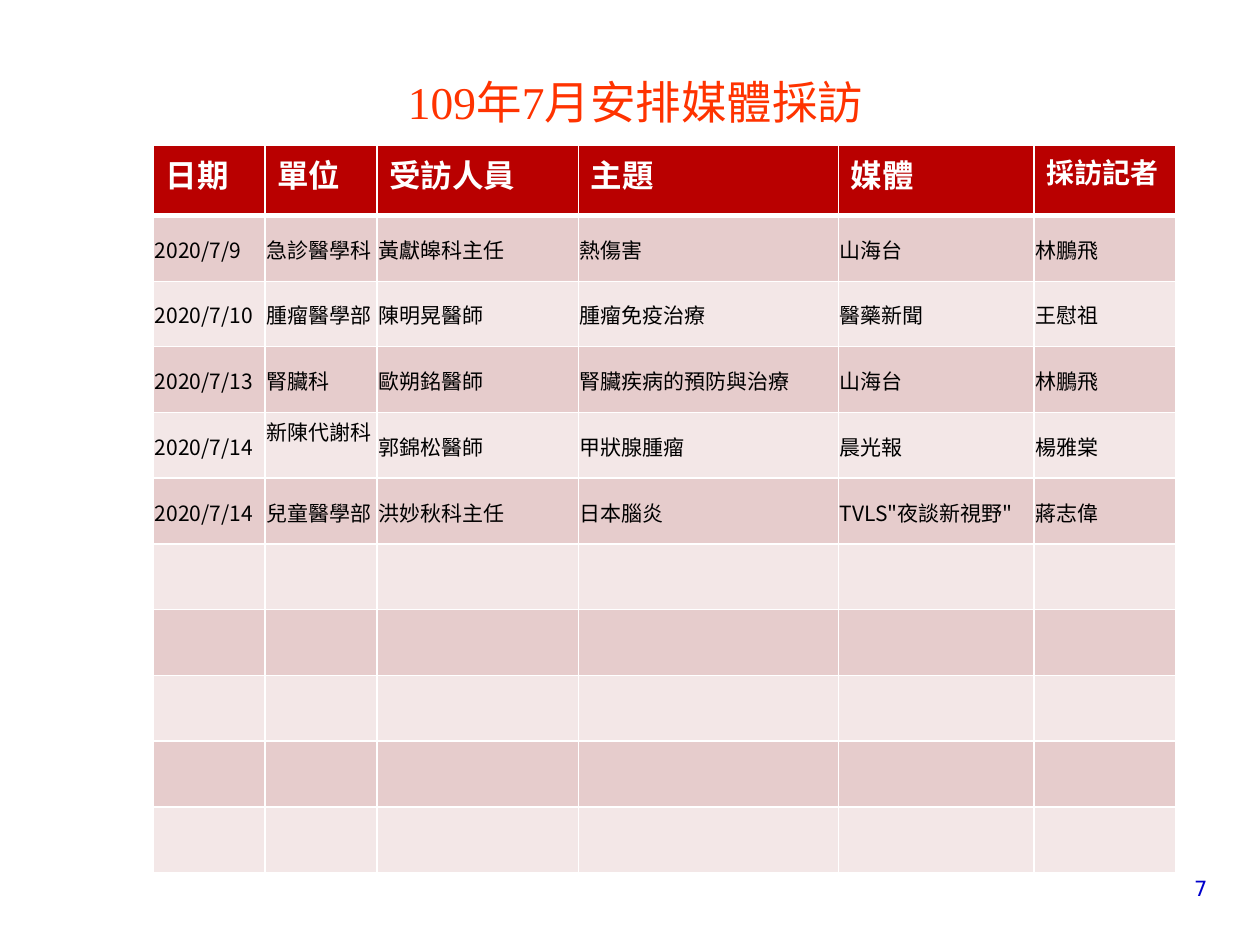
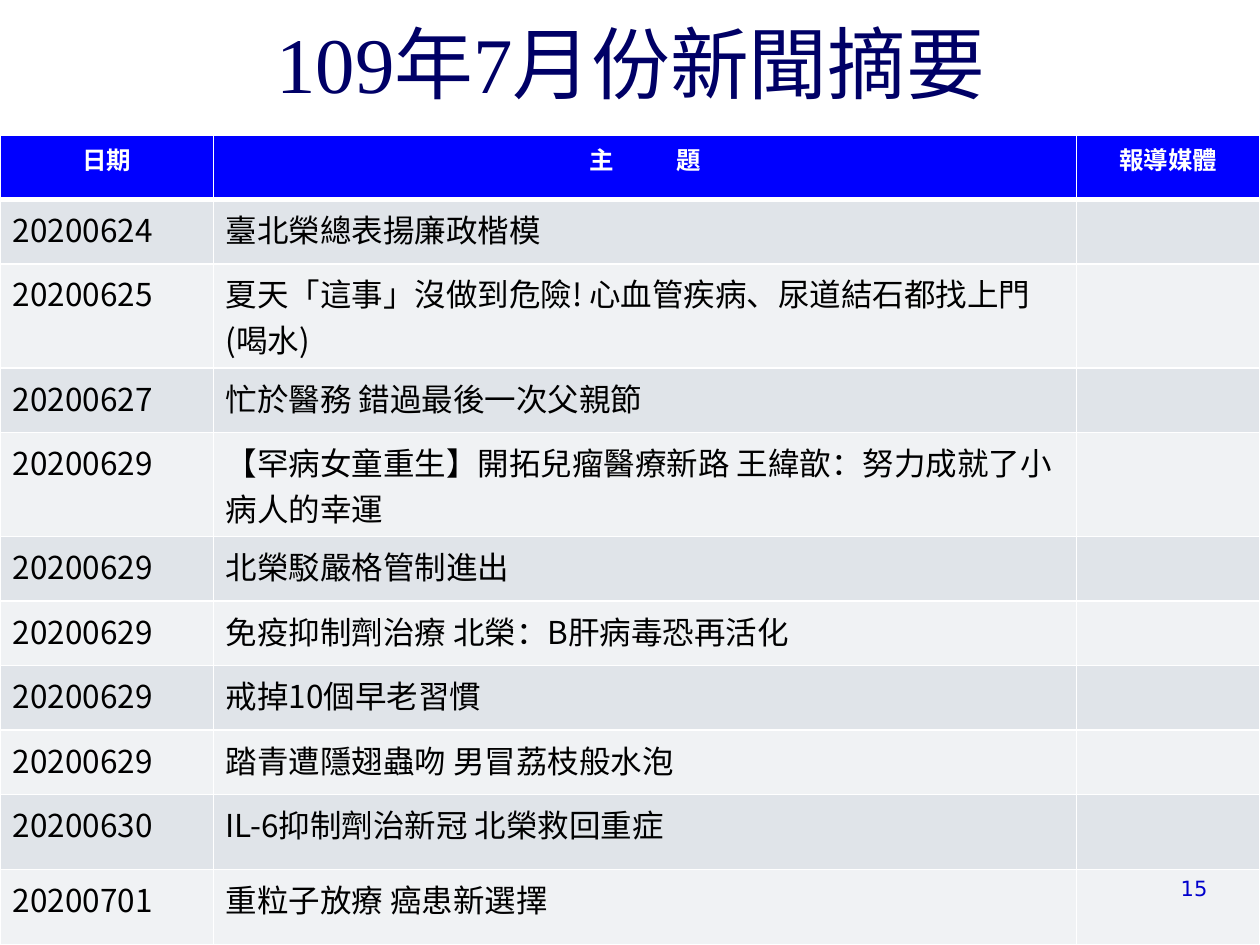
from lxml import etree
from pptx import Presentation
from pptx.dml.color import RGBColor
from pptx.enum import text
from pptx.oxml import ns
from pptx.util import Cm, Pt

WHITE = RGBColor(0xFF, 0xFF, 0xFF)
BLACK = RGBColor(0, 0, 0)
ORANGE = RGBColor(0xFF, 0x33, 0x00)
NAVY = RGBColor(0x00, 0x00, 0x66)
INK = RGBColor(0x00, 0x00, 0xCC)
RED = RGBColor(0xB9, 0x00, 0x00)
PINKS = RGBColor(0xE6, 0xCC, 0xCC), RGBColor(0xF3, 0xE7, 0xE7)
BLUE = RGBColor(0x00, 0x00, 0xFF)
GRAYS = RGBColor(0xE0, 0xE4, 0xE9), RGBColor(0xF0, 0xF2, 0xF4)
SERIF, SANS = "Times New Roman", "DejaVu Sans"
HAN, HANT = "Noto Sans CJK SC", "Noto Sans CJK TC"
LEFT, MID, RIGHT, JUST = (text.PP_ALIGN.LEFT, text.PP_ALIGN.CENTER,
                          text.PP_ALIGN.RIGHT, text.PP_ALIGN.JUSTIFY)
TOP, CENTER, BOTTOM = (text.MSO_ANCHOR.TOP, text.MSO_ANCHOR.MIDDLE,
                       text.MSO_ANCHOR.BOTTOM)
WIDE = (0.25, 0.13, 0.25, 0.13)  # insets: left, top, right, bottom
THIN = (0.03, 0.03, 0.03, 0)

# Content
VISITS = [
    ("日期", "單位", "受訪人員", "主題", "媒體", "採訪記者"),
    ("2020/7/9", "急診醫學科", "黃獻皞科主任", "熱傷害", "山海台", "林鵬飛"),
    ("2020/7/10", "腫瘤醫學部", "陳明晃醫師", "腫瘤免疫治療", "醫藥新聞", "王慰祖"),
    ("2020/7/13", "腎臟科", "歐朔銘醫師", "腎臟疾病的預防與治療", "山海台", "林鵬飛"),
    ("2020/7/14", "新陳代謝科", "郭錦松醫師", "甲狀腺腫瘤", "晨光報", "楊雅棠"),
    ("2020/7/14", "兒童醫學部", "洪妙秋科主任", "日本腦炎", 'TVLS"夜談新視野"', "蔣志偉"),
] + [("",) * 6] * 5

NEWS = [
    ("日期", "主 題", "報導媒體"),
    ("20200624", "臺北榮總表揚廉政楷模", ""),
    ("20200625", "夏天「這事」沒做到危險! 心血管疾病、尿道結石都找上門(喝水)", ""),
    ("20200627", "忙於醫務 錯過最後一次父親節", ""),
    ("20200629", "【罕病女童重生】開拓兒瘤醫療新路 王緯歆：努力成就了小病人的幸運", ""),
    ("20200629", "北榮駁嚴格管制進出", ""),
    ("20200629", "免疫抑制劑治療 北榮：B肝病毒恐再活化", ""),
    ("20200629", "戒掉10個早老習慣", ""),
    ("20200629", "踏青遭隱翅蟲吻 男冒荔枝般水泡", ""),
    ("20200630", "IL-6抑制劑治新冠 北榮救回重症", ""),
    ("20200701", "重粒子放療 癌患新選擇", ""),
]
ONE, TWO, LAST = 1.3, 2.1, 1.51  # heights of news rows

PAGES = [
    dict(title="109年7月安排媒體採訪", spot=(1.7, 1.91, 22.23, 0.81),
         size=26, color=ORANGE, page="7", rows=VISITS, at=(3.09, 2.92),
         cols=(2.25, 2.26, 4.06, 5.24, 3.95, 2.85),
         tall=[1.42] + [1.33, 1.32] * 5,
         head=dict(fill=RED, size=18, align=JUST),
         body=dict(fills=PINKS, size=12, inset=THIN, anchor=CENTER)),
    dict(title="109年7月份新聞摘要", spot=(1.6, 0.86, 22.23, 1.47),
         size=45, color=NAVY, page="15", rows=NEWS, at=(0.01, 2.72),
         cols=(4.29, 17.4, 3.7),
         tall=[ONE, ONE, TWO, ONE, TWO] + [ONE] * 4 + [LAST] * 2,
         head=dict(fill=BLUE, size=14, align=MID),
         body=dict(fills=GRAYS, size=18, inset=WIDE, anchor=TOP)),
]


def write(para, words, face, size, color, align=LEFT, bold=False):
    para.alignment = align
    run = para.add_run()
    run.text = words
    form = {"name": face, "size": Pt(size), "bold": bold}
    for key, value in form.items():
        setattr(run.font, key, value)
    run.font.color.rgb = color
    # East Asian glyphs come from a Han face
    east = etree.SubElement(run.font._element, ns.qn("a:ea"))
    east.set("typeface", face if face in (HAN, HANT) else HANT)
    return run


def pad(part, inset):
    for side, gap in zip(("left", "top", "right", "bottom"), inset):
        setattr(part, "margin_" + side, Cm(gap))


def label(slide, spot, words, face, size, color, align, anchor):
    frame = slide.shapes.add_textbox(*map(Cm, spot)).text_frame
    frame.word_wrap = True
    frame.vertical_anchor = anchor
    pad(frame, WIDE)
    write(frame.paragraphs[0], words, face, size, color, align)


def edge(cell, **wide):
    props = cell._tc.get_or_add_tcPr()
    for side in "LRTB":
        line = etree.SubElement(props, ns.qn("a:ln" + side),
                                w=str(Pt(wide.get(side, 1))))
        fill = etree.SubElement(line, ns.qn("a:solidFill"))
        etree.SubElement(fill, ns.qn("a:srgbClr"), val=str(WHITE))


def paint(cell, color):
    cell.fill.solid()
    cell.fill.fore_color.rgb = color


def grid(slide, page):
    rows, cols, tall = page["rows"], page["cols"], page["tall"]
    table = slide.shapes.add_table(
        len(rows), len(cols), *map(Cm, page["at"]),
        Cm(sum(cols)), Cm(sum(tall))).table
    for col, wide in zip(table.columns, cols):
        col.width = Cm(wide)
    for row, high in zip(table.rows, tall):
        row.height = Cm(high)
    head, body = page["head"], page["body"]
    for r, row in enumerate(rows):
        for c, words in enumerate(row):
            cell = table.cell(r, c)
            para = cell.text_frame.paragraphs[0]
            if r == 0:
                edge(cell, B=3)
                paint(cell, head["fill"])
                pad(cell, WIDE)
                size = 16 if words == "採訪記者" else head["size"]
                first, *rest = words.split(" ")
                if rest:  # spread the two characters apart
                    run = write(para, first + " ", HAN, size, WHITE, MID, True)
                    run.font._element.set("spc", "1620")
                    first = rest[0]
                write(para, first, HAN, size, WHITE, head["align"], True)
                continue
            edge(cell, T=3 if r == 1 else 1)
            paint(cell, body["fills"][(r - 1) % 2])
            if words:
                pad(cell, body["inset"])
                cell.vertical_anchor = body["anchor"]
                write(para, words, HANT, body["size"], BLACK)
                if words == "新陳代謝科":  # sits above the row's middle
                    cell.margin_bottom = Cm(0.61)


def main():
    deck = Presentation()
    deck.slide_width, deck.slide_height = Cm(25.4), Cm(19.05)
    for page in PAGES:
        slide = deck.slides.add_slide(deck.slide_layouts[6])
        label(slide, page["spot"], page["title"], SERIF, page["size"],
              page["color"], MID, BOTTOM)
        grid(slide, page)
        label(slide, (22.71, 17.53, 1.88, 0.76), page["page"], SANS, 12,
              INK, RIGHT, TOP)
    deck.save("out.pptx")


if __name__ == "__main__":
    main()
